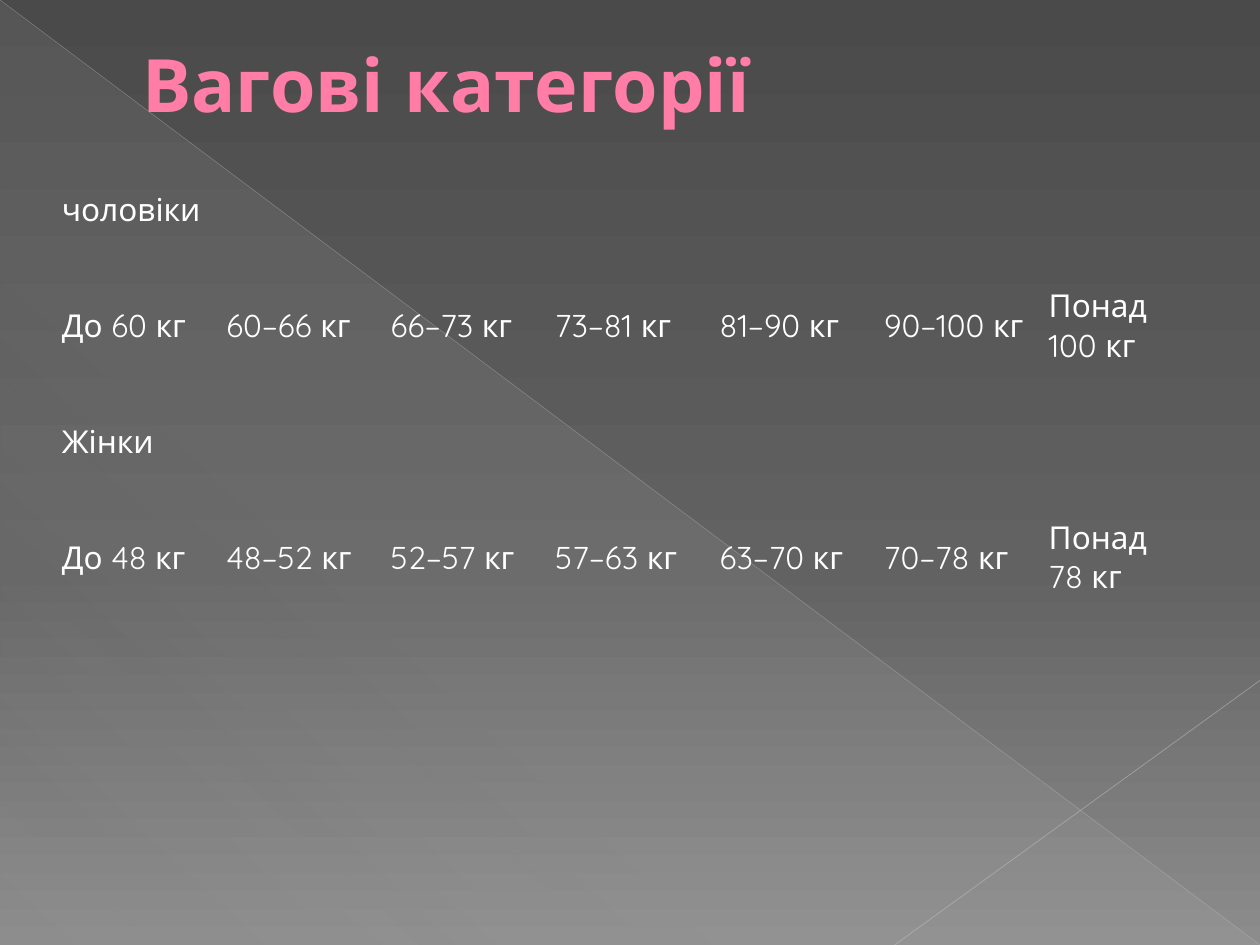
from dataclasses import dataclass
from typing import Any, NamedTuple

from lxml import etree
from pptx import Presentation
from pptx.dml.color import RGBColor
from pptx.enum.shapes import MSO_CONNECTOR, MSO_SHAPE
from pptx.enum.text import MSO_ANCHOR
from pptx.oxml.ns import qn
from pptx.util import Inches, Pt

STRAIGHT = MSO_CONNECTOR.STRAIGHT
RIGHT_TRIANGLE = MSO_SHAPE.RIGHT_TRIANGLE
TOP, MIDDLE = MSO_ANCHOR.TOP, MSO_ANCHOR.MIDDLE
NO_GRID_STYLE = "{2D5ABB26-0587-4C30-8999-92F81FD0307C}"
SLIDE_WIDTH, SLIDE_HEIGHT = Inches(10), Inches(7.5)


class Stop(NamedTuple):
    position: int
    color: str
    opacity: int = 100


class DiagonalLine(NamedTuple):
    start: tuple[float, float]
    end: tuple[float, float]
    color: str
    width: float
    opacity: int


class WeightClass(NamedTuple):
    heading: str
    ranges: tuple[str, ...]


@dataclass(frozen=True)
class Theme:
    font: str = "Quicksand"
    title_size: float = 42
    body_size: float = 18
    title_color: str = "FF7DA7"
    title_outline: str = "B12761"
    body_color: str = "FFFFFF"
    background: tuple[Stop, ...] = (
        Stop(0, "4A4A4A"), Stop(60, "626262"), Stop(100, "8C8C8C"))
    triangle: tuple[Stop, ...] = (
        Stop(0, "D2D2D2", 10), Stop(70, "D2D2D2", 8), Stop(100, "D2D2D2", 1))


THEME = Theme()
LINES = (
    DiagonalLine((0, 0), (1, 1), "BFBFBF", 0.39, 35),
    DiagonalLine((1, 0.72), (0.71, 1), "C6C6C6", 0.47, 45),
)
WEIGHT_CLASSES = (
    WeightClass("чоловіки", ("До 60\u00a0кг", "60–66\u00a0кг", "66–73\u00a0кг", "73–81\u00a0кг",
                             "81–90\u00a0кг", "90–100\u00a0кг", "Понад 100\u00a0кг")),
    WeightClass("Жінки", ("До 48\u00a0кг", "48–52\u00a0кг", "52–57\u00a0кг", "57–63\u00a0кг",
                          "63–70\u00a0кг", "70–78\u00a0кг", "Понад 78\u00a0кг")),
)


def across(share: float) -> int:
    return round(SLIDE_WIDTH * share)


def down(share: float) -> int:
    return round(SLIDE_HEIGHT * share)


def add_opacity(color: Any, opacity: int) -> None:
    etree.SubElement(color, qn("a:alpha"), val=str(opacity * 1000))


def apply_gradient(fill: Any, owner: Any, stops: tuple[Stop, ...], clockwise: int) -> None:
    fill.gradient()
    fill.gradient_angle = 360 - clockwise
    stop_list = next(owner.iter(qn("a:gsLst")))
    stop_list.clear()
    for stop in stops:
        entry = etree.SubElement(stop_list, qn("a:gs"), pos=str(stop.position * 1000))
        color = etree.SubElement(entry, qn("a:srgbClr"), val=stop.color)
        if stop.opacity < 100:
            add_opacity(color, stop.opacity)


def write_text(frame: Any, text: str, *, size: float, color: str,
               bold: bool = False, outline: str | None = None, indent: float = 0) -> None:
    paragraph = frame.paragraphs[0]
    if indent:
        paragraph._p.get_or_add_pPr().set("marL", str(Inches(indent)))
    run = paragraph.add_run()
    run.text = text
    run.font.name = THEME.font
    run.font.size = Pt(size)
    run.font.bold = bold
    run.font.color.rgb = RGBColor.from_string(color)
    if outline:
        line = etree.Element(qn("a:ln"), w=str(Pt(0.5)))
        solid = etree.SubElement(line, qn("a:solidFill"))
        etree.SubElement(solid, qn("a:srgbClr"), val=outline)
        run.font._element.insert(0, line)


def add_triangle(slide: Any) -> None:
    triangle = slide.shapes.add_shape(RIGHT_TRIANGLE, 0, 0, SLIDE_WIDTH, SLIDE_HEIGHT)
    triangle.shadow.inherit = False
    triangle.line.fill.background()
    apply_gradient(triangle.fill, triangle.element, THEME.triangle, 133)


def add_line(slide: Any, line: DiagonalLine) -> None:
    connector = slide.shapes.add_connector(
        STRAIGHT, across(line.start[0]), down(line.start[1]),
        across(line.end[0]), down(line.end[1]))
    connector.line.width = Pt(line.width)
    connector.line.color.rgb = RGBColor.from_string(line.color)
    add_opacity(next(connector.element.iter(qn("a:srgbClr"))), line.opacity)
    etree.SubElement(connector.element.spPr, qn("a:effectLst"))


def add_title(slide: Any, text: str) -> None:
    box = slide.shapes.add_textbox(Inches(0.5), Inches(0.29), across(0.9), Inches(1.53))
    frame = box.text_frame
    frame.word_wrap = True
    frame.vertical_anchor = TOP
    frame.margin_top = Inches(0.02)
    write_text(frame, text, size=THEME.title_size, color=THEME.title_color,
               bold=True, outline=THEME.title_outline, indent=0.53)


def add_weight_table(slide: Any, classes: tuple[WeightClass, ...]) -> None:
    column_count = len(classes[0].ranges)
    graphic = slide.shapes.add_table(2 * len(classes), column_count, Inches(0.39),
                                     Inches(1.33), Inches(9.14), Inches(3.68))
    table = graphic.table
    table.first_row = table.horz_banding = False
    next(graphic.element.iter(qn("a:tableStyleId"))).text = NO_GRID_STYLE
    for index, weight_class in enumerate(classes):
        heading_row, range_row = 2 * index, 2 * index + 1
        table.rows[heading_row].height = Inches(0.67)
        table.rows[range_row].height = Inches(1.17)
        heading = table.cell(heading_row, 0)
        heading.merge(table.cell(heading_row, column_count - 1))
        entries = [(heading, weight_class.heading)]
        entries += [(table.cell(range_row, column), text)
                    for column, text in enumerate(weight_class.ranges)]
        for cell, text in entries:
            cell.vertical_anchor = MIDDLE
            write_text(cell.text_frame, text, size=THEME.body_size, color=THEME.body_color)
    for cell in table.iter_cells():
        cell.fill.background()


def main() -> None:
    presentation = Presentation()
    presentation.slide_width, presentation.slide_height = SLIDE_WIDTH, SLIDE_HEIGHT
    slide = presentation.slides.add_slide(presentation.slide_layouts[6])
    apply_gradient(slide.background.fill, slide.element, THEME.background, 90)
    add_triangle(slide)
    for line in LINES:
        add_line(slide, line)
    add_title(slide, "Вагові категорії")
    add_weight_table(slide, WEIGHT_CLASSES)
    presentation.save("out.pptx")


if __name__ == "__main__":
    main()
